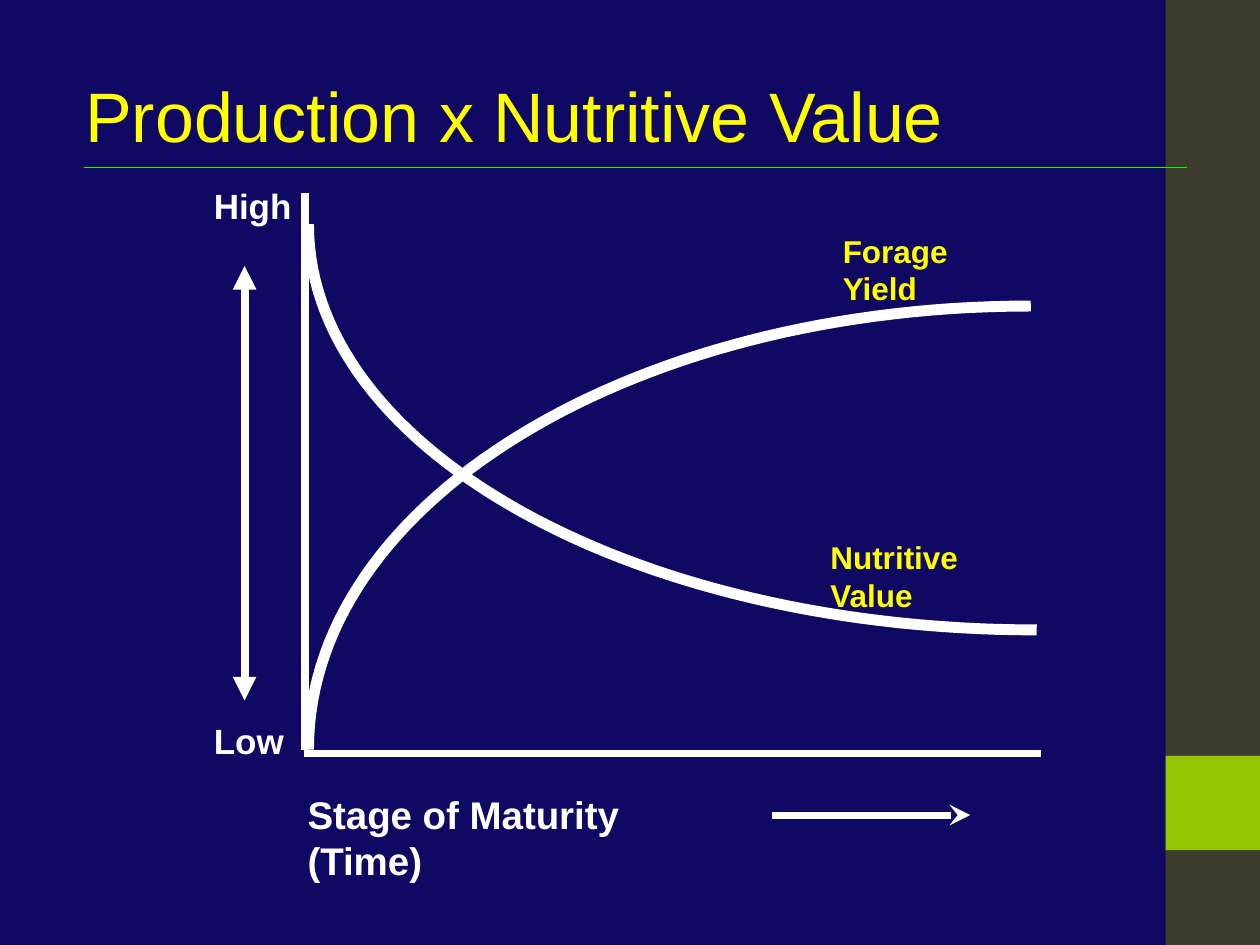
from lxml import etree
from pptx import Presentation
from pptx import util as u
from pptx.dml.color import RGBColor
from pptx.enum import shapes, text
from pptx.oxml import ns

COLORS = {
    "navy": "0F0963", "olive": "3E3D2D", "lime": "94C600",
    "yellow": "FFFF00", "white": "FFFFFF", "green": "00FF00",
}
PANELS = [
    ((23.5, 0, 1.9, 19.05), "olive"),
    ((23.5, 15.24, 1.9, 1.9), "lime"),
]
AXES = [
    ((6.15, 3.89), (6.15, 15.11), "white", 4.13, {}),
    ((6.12, 15.19), (20.98, 15.19), "white", 4.13, {}),
]
CURVES = [
    [(20.9, 12.7), (12.78, 12.7), (6.22, 9.07), (6.22, 4.52)],
    [(20.78, 6.17), (12.73, 6.17), (6.22, 10.13), (6.22, 15.11)],
]
GUIDES = [
    ((15.57, 16.43), (19.56, 16.43), "white", 4, {"tailEnd": "stealth"}),
    ((4.93, 5.36), (4.93, 14.12), "white", 4.5,
     {"headEnd": "triangle", "tailEnd": "triangle"}),
    ((1.7, 3.38), (23.93, 3.38), "green", 0.75, {}),
]
PADDED = {"margins": (0.25, 0.13), "anchor": text.MSO_ANCHOR.BOTTOM}
CURVE_LABEL = {"size": 18, "color": "yellow"}
LABELS = [
    ("Production x Nutritive Value", (1.47, 1.32, 22.22, 1.96),
     {"size": 40, "color": "yellow", "bold": False, **PADDED}),
    ("Forage Yield", (16.99, 4.67, 3.38, 0.76), CURVE_LABEL),
    ("Nutritive Value", (16.74, 10.85, 3.96, 0.76), CURVE_LABEL),
    ("Stage of Maturity\v(Time)", (6.2, 15.95, 9.04, 1.85), {"size": 22}),
    ("High", (4.06, 3.61, 2.44, 1.09), PADDED),
    ("Low", (4.06, 14.4, 2.06, 1.09), PADDED),
]
CURVE_STEPS = 60


def rgb(name):
    return RGBColor.from_string(COLORS[name])


def lengths(values):
    return [u.Cm(value) for value in values]


def add_panel(page, place, color):
    panel = page.shapes.add_shape(shapes.MSO_SHAPE.RECTANGLE, *lengths(place))
    panel.shadow.inherit = False
    panel.fill.solid()
    panel.fill.fore_color.rgb = rgb(color)
    panel.line.fill.background()


def add_line(page, start, end, color, width, arrows):
    line = page.shapes.add_connector(
        shapes.MSO_CONNECTOR.STRAIGHT, *lengths(start + end))
    line.line.color.rgb = rgb(color)
    line.line.width = u.Pt(width)
    outline = line.line._get_or_add_ln()
    for tag, kind in arrows.items():
        etree.SubElement(outline, ns.qn(f"a:{tag}"), type=kind)
    etree.SubElement(line._element.spPr, ns.qn("a:effectLst"))


def bezier(controls, t):
    weights = ((1 - t) ** 3, 3 * t * (1 - t) ** 2, 3 * t ** 2 * (1 - t), t ** 3)
    return tuple(sum(w * value for w, value in zip(weights, axis))
                 for axis in zip(*controls))


def add_curve(page, controls):
    points = [lengths(bezier(controls, step / CURVE_STEPS))
              for step in range(CURVE_STEPS + 1)]
    builder = page.shapes.build_freeform(*points[0])
    builder.add_line_segments(points[1:], close=False)
    curve = builder.convert_to_shape()
    curve.shadow.inherit = False
    curve.fill.background()
    curve.line.color.rgb = rgb("white")
    curve.line.width = u.Pt(6.25)


def add_text(page, words, place, size=20, color="white", bold=True,
             margins=(0, 0), anchor=text.MSO_ANCHOR.TOP):
    box = page.shapes.add_textbox(*lengths(place))
    frame = box.text_frame
    frame.word_wrap = True
    frame.vertical_anchor = anchor
    frame.margin_left = frame.margin_right = u.Cm(margins[0])
    frame.margin_top = frame.margin_bottom = u.Cm(margins[1])
    para = frame.paragraphs[0]
    para.text = words
    for span in para.runs:
        span.font.name = "Arial"
        span.font.size = u.Pt(size)
        span.font.bold = bold
        span.font.color.rgb = rgb(color)


def main():
    deck = Presentation()
    deck.slide_width, deck.slide_height = lengths((25.4, 19.05))
    page = deck.slides.add_slide(deck.slide_layouts[6])
    page.background.fill.solid()
    page.background.fill.fore_color.rgb = rgb("navy")
    for panel in PANELS:
        add_panel(page, *panel)
    for axis in AXES:
        add_line(page, *axis)
    for controls in CURVES:
        add_curve(page, controls)
    for words, place, style in LABELS:
        add_text(page, words, place, **style)
    for guide in GUIDES:
        add_line(page, *guide)
    deck.save("out.pptx")


if __name__ == "__main__":
    main()
